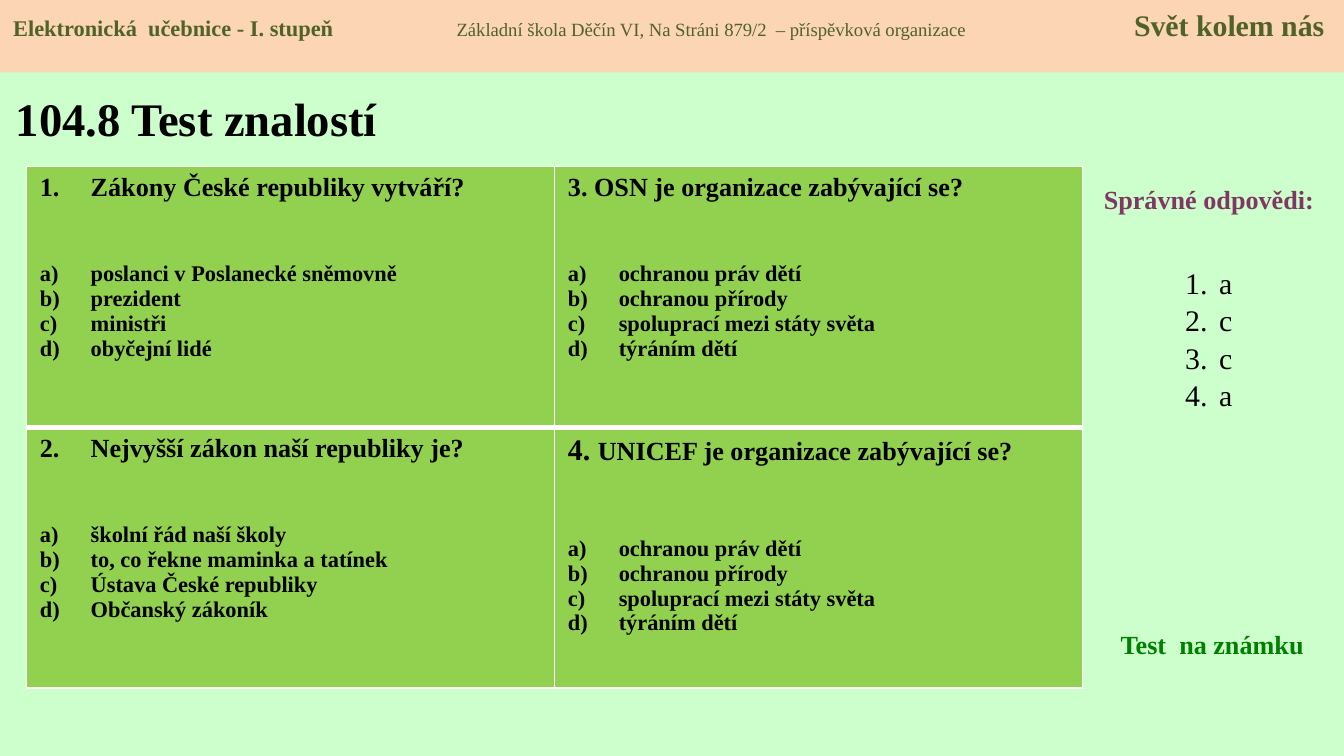
import pptx
import pptx.dml.color
import pptx.enum.shapes
import pptx.enum.text
import pptx.oxml.ns
import pptx.util
from lxml import etree

Cm = pptx.util.Cm
Pt = pptx.util.Pt
qn = pptx.oxml.ns.qn
RGB = pptx.dml.color.RGBColor.from_string
ALIGN = pptx.enum.text.PP_ALIGN

COLORS = {
    "page": "CCFFCC", "header": "FCD5B5", "header_text": "4F6228",
    "cell": "92D050", "border": "FFFFFF", "text": "000000",
    "answers": "813763", "grade": "008000",
}


def write(para, text, size=12, color="text", bold=True, align=ALIGN.LEFT,
          before=0, indent=0, numbering=None, start=1):
    """Add a formatted span; indent is a hanging indent in cm."""
    span = para.add_run()
    span.text = text
    span.font.name = "Times New Roman"
    span.font.size = Pt(size)
    span.font.bold = bold
    span.font.color.rgb = RGB(COLORS[color])
    para.alignment = align
    para.space_before = Pt(before)
    properties = para._p.get_or_add_pPr()
    if indent:
        properties.set("marL", str(Cm(indent)))
        properties.set("indent", str(-Cm(indent)))
    if numbering:
        number = etree.SubElement(properties, qn("a:buAutoNum"), type=numbering)
        if start > 1:
            number.set("startAt", str(start))


def add_box(page, left, top, width, height):
    box = page.shapes.add_textbox(Cm(left), Cm(top), Cm(width), Cm(height))
    box.text_frame.word_wrap = True
    return box.text_frame


deck = pptx.Presentation()
deck.slide_width, deck.slide_height = Cm(25.4), Cm(14.29)
page = deck.slides.add_slide(deck.slide_layouts[6])
page.background.fill.solid()
page.background.fill.fore_color.rgb = RGB(COLORS["page"])

# Title
title = add_box(page, 0.05, 1.4, 8.1, 1.65)
title.vertical_anchor = pptx.enum.text.MSO_ANCHOR.MIDDLE
write(title.paragraphs[0], "104.8 Test znalostí", size=25)

# Answers heading
heading = add_box(page, 20.45, 3.35, 4.8, 0.86)
write(heading.paragraphs[0], "Správné odpovědi:", size=14, color="answers",
      align=ALIGN.CENTER)

# Question table: number, spans of the question, gap before options, options
rights = ["ochranou práv dětí", "ochranou přírody",
          "spoluprací mezi státy světa", "týráním dětí"]
questions = [
    [(1, [("Zákony České republiky vytváří?", 14)], 32,
      ["poslanci v Poslanecké sněmovně", "prezident", "ministři",
       "obyčejní lidé"]),
     (None, [("3. OSN je organizace zabývající se?", 14)], 32, rights)],
    [(2, [("Nejvyšší zákon naší republiky je?", 14)], 32,
      ["školní řád naší školy", "to, co řekne maminka a tatínek",
       "Ústava České republiky", "Občanský zákoník"]),
     (None, [("4. ", 16), ("UNICEF je organizace zabývající se?", 14)], 37,
      rights)],
]
table = page.shapes.add_table(2, 2, Cm(0.5), Cm(3.15), Cm(19.96), Cm(9.86)).table
table.first_row = table.horz_banding = False
for row_index, row in enumerate(questions):
    table.rows[row_index].height = Cm(4.93)
    for column_index, (number, spans, gap, options) in enumerate(row):
        cell = table.cell(row_index, column_index)
        middle_edge = "lnB" if row_index == 0 else "lnT"
        for edge in ("lnL", "lnR", "lnT", "lnB"):
            width = Pt(3 if edge == middle_edge else 1)
            line = etree.SubElement(cell._tc.get_or_add_tcPr(),
                                    qn("a:" + edge), w=str(width))
            fill = etree.SubElement(line, qn("a:solidFill"))
            etree.SubElement(fill, qn("a:srgbClr"), val=COLORS["border"])
        cell.fill.solid()
        cell.fill.fore_color.rgb = RGB(COLORS["cell"])
        para = cell.text_frame.paragraphs[0]
        for text, size in spans:
            write(para, text, size=size, indent=0.96)
        if number:
            etree.SubElement(para._p.get_or_add_pPr(), qn("a:buAutoNum"),
                             type="arabicPeriod", startAt=str(number))
        for index, option in enumerate(options):
            write(cell.text_frame.add_paragraph(), option, indent=0.96,
                  before=0 if index else gap, numbering="alphaLcParenR")

# Numbered answers
answers = add_box(page, 22.15, 4.2, 1.4, 5.05)
answers.margin_top = Cm(0.81)
for index, answer in enumerate("acca"):
    para = answers.add_paragraph() if index else answers.paragraphs[0]
    write(para, answer, size=16, bold=False, indent=0.64,
          before=0.7, numbering="arabicPeriod")

# Graded test label
grade = add_box(page, 20.93, 11.76, 4, 0.86)
write(grade.paragraphs[0], "Test  na známku", size=14, color="grade")

# Header band with tab stops for its three parts
header = page.shapes.add_shape(pptx.enum.shapes.MSO_SHAPE.RECTANGLE,
                               0, 0, Cm(25.4), Cm(1.37))
header.shadow.inherit = False
header.fill.solid()
header.fill.fore_color.rgb = RGB(COLORS["header"])
header.line.fill.background()
header.text_frame.vertical_anchor = pptx.enum.text.MSO_ANCHOR.TOP
para = header.text_frame.paragraphs[0]
write(para, "Elektronická  učebnice - I. stupeň\t", color="header_text")
write(para, "Základní škola Děčín VI, Na Stráni 879/2  – příspěvková organizace\t",
      size=10, color="header_text", bold=False)
write(para, "Svět kolem nás", size=16, color="header_text")
tabs = etree.SubElement(para._p.get_or_add_pPr(), qn("a:tabLst"))
for position, kind in ((8.38, "l"), (24.78, "r")):
    etree.SubElement(tabs, qn("a:tab"), pos=str(Cm(position)), algn=kind)

deck.save("out.pptx")
